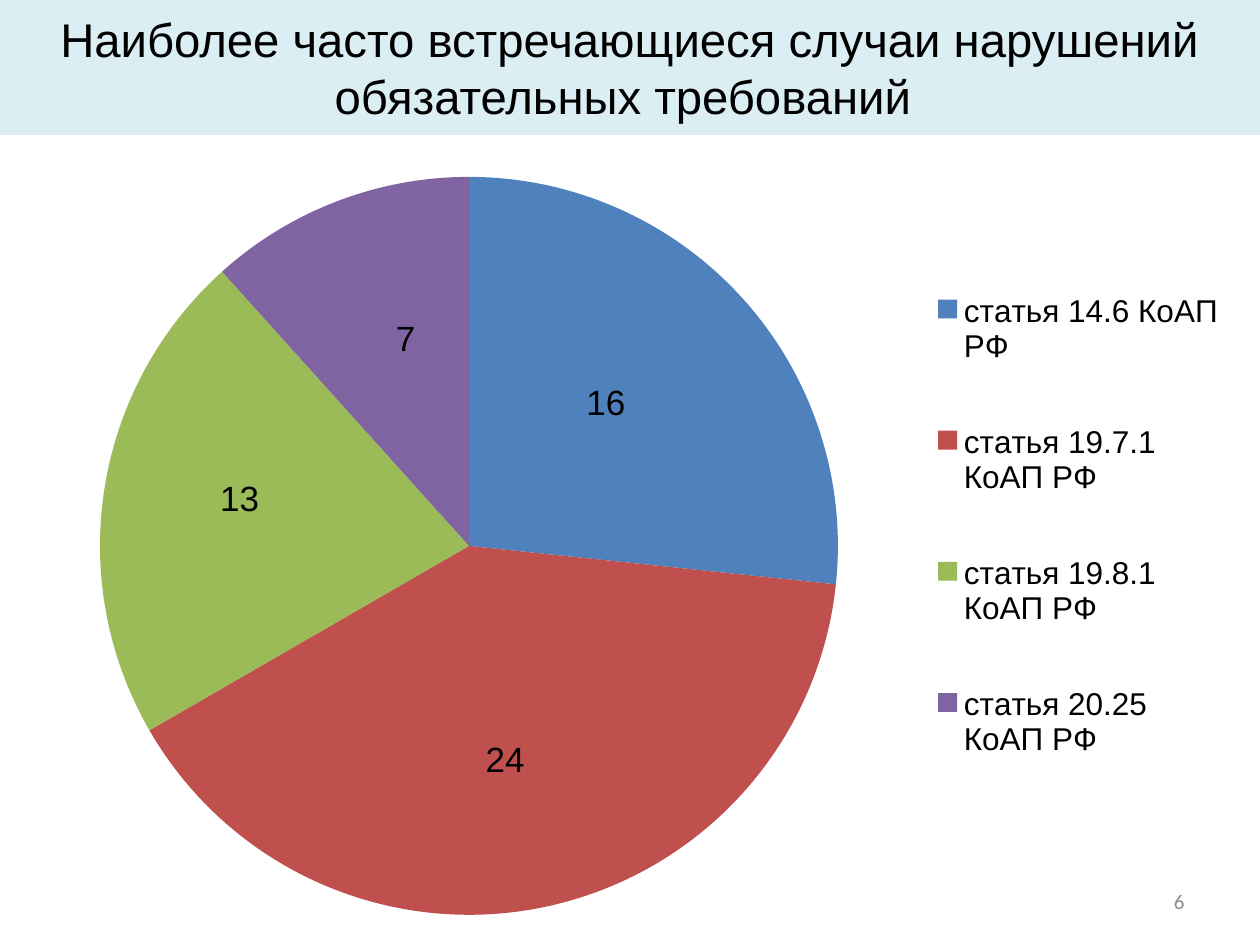
from dataclasses import dataclass

from lxml.etree import SubElement
from pptx import Presentation
from pptx.chart.data import CategoryChartData
from pptx.dml.color import RGBColor
from pptx.enum.chart import XL_CHART_TYPE, XL_LABEL_POSITION, XL_LEGEND_POSITION
from pptx.enum.text import MSO_ANCHOR, MSO_AUTO_SIZE, PP_ALIGN
from pptx.oxml.ns import qn
from pptx.util import Emu, Pt

SCALE = 914400 / 126


@dataclass(frozen=True)
class Box:
    x: int
    y: int
    w: int
    h: int

    def emu(self) -> list[Emu]:
        return [px(n) for n in (self.x, self.y, self.w, self.h)]


@dataclass(frozen=True)
class Slice:
    name: str
    count: int
    fill: str
    dx: int
    dy: int


SLICES = [
    Slice("статья 14.6 КоАП РФ", 16, "4F81BD", 0, -19),
    Slice("статья 19.7.1 КоАП РФ", 24, "C0504D", -2, 34),
    Slice("статья 19.8.1 КоАП РФ", 13, "9BBB59", -47, -17),
    Slice("статья 20.25 КоАП РФ", 7, "8064A2", 3, -34),
]
TITLE = Box(-1, 0, 1261, 135)
CHART = Box(-84, 125, 1375, 849)
PIE = Box(100, 177, 738, 738)
LEGEND = Box(934, 233, 288, 585)
NUMBER = Box(903, 876, 294, 50)


def px(n: int) -> Emu:
    return Emu(round(n * SCALE))


def paint(fill, tone: str) -> None:
    fill.solid()
    fill.fore_color.rgb = RGBColor.from_string(tone)


def style(font, face: str, size: int, tone: str = "000000") -> None:
    font.name = face
    font.size = Pt(size)
    font.color.rgb = RGBColor.from_string(tone)


def write(shape, text: str, face: str, size: int, tone: str, align: PP_ALIGN) -> None:
    frame = shape.text_frame
    frame.word_wrap = True
    frame.auto_size = MSO_AUTO_SIZE.NONE
    frame.vertical_anchor = MSO_ANCHOR.MIDDLE
    para = frame.paragraphs[0]
    para.alignment = align
    run = para.add_run()
    run.text = text
    style(run.font, face, size, tone)


def layout(node, index: int, rules: dict[str, str]) -> None:
    for old in node.findall(qn("c:layout")):
        node.remove(old)
    outer = SubElement(node, qn("c:layout"))
    node.insert(index, outer)
    manual = SubElement(outer, qn("c:manualLayout"))
    for tag, val in rules.items():
        SubElement(manual, qn(f"c:{tag}")).set("val", val)


def share(x: int, y: int) -> tuple[str, str]:
    return f"{x / CHART.w:.4f}", f"{y / CHART.h:.4f}"


def place(node, box: Box, index: int, inner: bool = False) -> None:
    x, y = share(box.x - CHART.x, box.y - CHART.y)
    w, h = share(box.w, box.h)
    rules = {"layoutTarget": "inner"} if inner else {}
    rules |= {"xMode": "edge", "yMode": "edge", "x": x, "y": y, "w": w, "h": h}
    layout(node, index, rules)


def draw_pie(slide, parts: list[Slice]) -> None:
    data = CategoryChartData()
    data.categories = [part.name for part in parts]
    data.add_series("Series 1", [part.count for part in parts])
    chart = slide.shapes.add_chart(XL_CHART_TYPE.PIE, *CHART.emu(), data).chart
    style(chart.font, "Calibri", 18)
    chart.has_title = False

    chart.has_legend = True
    legend = chart.legend
    legend.position = XL_LEGEND_POSITION.RIGHT
    legend.include_in_layout = False
    style(legend.font, "Arial", 18)

    plot = chart.plots[0]
    plot.vary_by_categories = True
    series = plot.series[0]
    series.data_labels.show_value = True
    style(series.data_labels.font, "Arial", 20)
    for i, part in enumerate(parts):
        point = series.points[i]
        paint(point.format.fill, part.fill)
        label = point.data_label
        label.position = XL_LABEL_POSITION.CENTER
        style(label.font, "Arial", 20)

    root = chart.element
    for node, part in zip(root.findall(".//" + qn("c:dLbl")), parts):
        x, y = share(part.dx, part.dy)
        layout(node, 1, {"x": x, "y": y})
    place(root.find(".//" + qn("c:plotArea")), PIE, 0, inner=True)
    place(root.find(".//" + qn("c:legend")), LEGEND, 1)


def main() -> None:
    deck = Presentation()
    deck.slide_width, deck.slide_height = px(1260), px(945)
    slide = deck.slides.add_slide(deck.slide_layouts[5])

    title = slide.shapes.title
    title.left, title.top, title.width, title.height = TITLE.emu()
    paint(title.fill, "DBEEF4")
    write(title, "Наиболее часто встречающиеся случаи нарушений обязательных требований ",
          "Arial", 27, "000000", PP_ALIGN.CENTER)

    draw_pie(slide, SLICES)

    number = slide.shapes.add_textbox(*NUMBER.emu())
    write(number, "6", "Calibri", 12, "8C8C8C", PP_ALIGN.RIGHT)
    deck.save("out.pptx")


if __name__ == "__main__":
    main()
